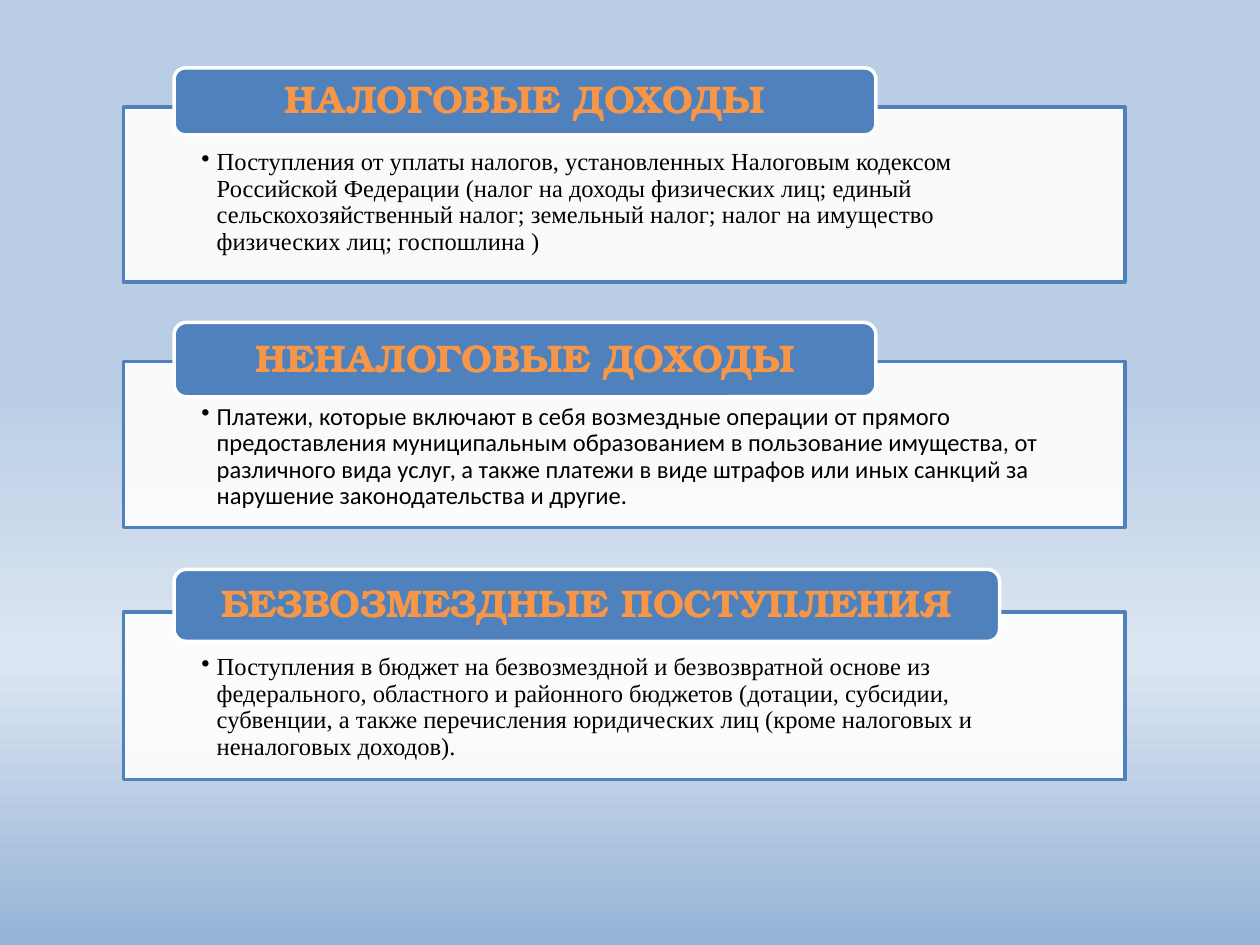
from lxml import etree
from pptx import Presentation
from pptx.dml.color import RGBColor
from pptx.enum.shapes import MSO_SHAPE
from pptx.enum.text import MSO_ANCHOR, PP_ALIGN
from pptx.oxml.ns import qn
from pptx.util import Cm, Pt

RECTANGLE = MSO_SHAPE.RECTANGLE
ROUNDED = MSO_SHAPE.ROUNDED_RECTANGLE
TOP, MIDDLE = MSO_ANCHOR.TOP, MSO_ANCHOR.MIDDLE
LEFT, CENTER = PP_ALIGN.LEFT, PP_ALIGN.CENTER

COLORS = {
    "sky": "B9CDE5",
    "haze": "DCE6F2",
    "dusk": "95B3D7",
    "blue": "4F81BD",
    "white": "FFFFFF",
    "orange": "F79646",
    "black": "000000",
}
BACKGROUND_STOPS = [(0, "sky"), (40, "sky"), (70, "haze"), (100, "dusk")]

PANEL_LEFT, PANEL_WIDTH = 2.49, 20.19
LABEL_INDENT = 1.02

PANELS = [
    {
        "title": "НАЛОГОВЫЕ ДОХОДЫ",
        "body": "Поступления от уплаты налогов, установленных Налоговым кодексом "
                "Российской Федерации (налог на доходы физических лиц; единый "
                "сельскохозяйственный налог; земельный налог; налог на имущество "
                "физических лиц; госпошлина )",
        "font": "Times New Roman",
        "box": (PANEL_LEFT, 2.16, PANEL_WIDTH, 3.53),
        "label": (0.79, 14.15, 1.35),
    },
    {
        "title": "НЕНАЛОГОВЫЕ ДОХОДЫ",
        "body": "Платежи, которые включают в себя возмездные операции от прямого "
                "предоставления муниципальным образованием в пользование имущества, "
                "от различного вида услуг, а также платежи в виде штрафов или иных "
                "санкций за нарушение законодательства и другие.",
        "font": "Calibri",
        "box": (PANEL_LEFT, 7.29, PANEL_WIDTH, 3.35),
        "label": (0.79, 14.15, 1.5),
    },
    {
        "title": "БЕЗВОЗМЕЗДНЫЕ ПОСТУПЛЕНИЯ",
        "body": "Поступления в бюджет на безвозмездной и безвозвратной основе из "
                "федерального, областного и районного бюджетов (дотации, субсидии, "
                "субвенции, а также перечисления юридических лиц (кроме налоговых и "
                "неналоговых доходов).",
        "font": "Times New Roman",
        "box": (PANEL_LEFT, 12.34, PANEL_WIDTH, 3.38),
        "label": (0.86, 16.64, 1.45),
    },
]


def rgb(name):
    return RGBColor.from_string(COLORS[name])


def paint_background(page):
    fill = page.background.fill
    fill.gradient()
    fill.gradient_angle = 270
    stops = page.element.find(".//" + qn("a:gsLst"))
    for stop in list(stops):
        stops.remove(stop)
    for percent, name in BACKGROUND_STOPS:
        stop = etree.SubElement(stops, qn("a:gs"), pos=str(percent * 1000))
        etree.SubElement(stop, qn("a:srgbClr"), val=COLORS[name])


def add_box(page, kind, box, fill, line):
    shape = page.shapes.add_shape(kind, *[Cm(length) for length in box])
    shape.shadow.inherit = False
    shape.fill.solid()
    shape.fill.fore_color.rgb = rgb(fill)
    shape.line.color.rgb = rgb(line)
    shape.line.width = Pt(2)
    return shape


def write_text(shape, text, insets, anchor, align, font, size, color, bold=False):
    frame = shape.text_frame
    frame.text = text
    frame.word_wrap = True
    frame.vertical_anchor = anchor
    (frame.margin_left, frame.margin_top,
     frame.margin_right, frame.margin_bottom) = [Cm(inset) for inset in insets]
    para = frame.paragraphs[0]
    para.alignment = align
    para.line_spacing = 0.9
    span = para.runs[0]
    span.font.name = font
    span.font.size = Pt(size)
    span.font.bold = bold
    span.font.color.rgb = rgb(color)
    return para


def add_bullet(para, indent):
    properties = para._p.get_or_add_pPr()
    properties.set("marL", str(Cm(indent)))
    properties.set("indent", str(-Cm(indent)))
    etree.SubElement(properties, qn("a:buChar"), char="•")


def add_panel(page, box, label, title, body, font):
    left, top, width, height = box
    rise, label_width, label_height = label

    panel = add_box(page, RECTANGLE, box, "white", "blue")
    color = panel.fill._xPr.find(".//" + qn("a:srgbClr"))
    etree.SubElement(color, qn("a:alpha"), val="90000")
    para = write_text(panel, body, (1.57, 0.86, 1.57, 0.28), TOP, LEFT,
                      font, 14, "black")
    para.level = 1
    add_bullet(para, 0.31)

    label_box = (left + LABEL_INDENT, top - rise, label_width, label_height)
    heading = add_box(page, ROUNDED, label_box, "blue", "white")
    write_text(heading, title, (0.6, 0, 0.6, 0), MIDDLE, CENTER,
               "TeX Gyre Bonum", 22, "orange", bold=True)


def main():
    deck = Presentation()
    deck.slide_width, deck.slide_height = Cm(25.4), Cm(19.05)
    page = deck.slides.add_slide(deck.slide_layouts[6])
    paint_background(page)
    for panel in PANELS:
        add_panel(page, **panel)
    deck.save("out.pptx")


if __name__ == "__main__":
    main()
